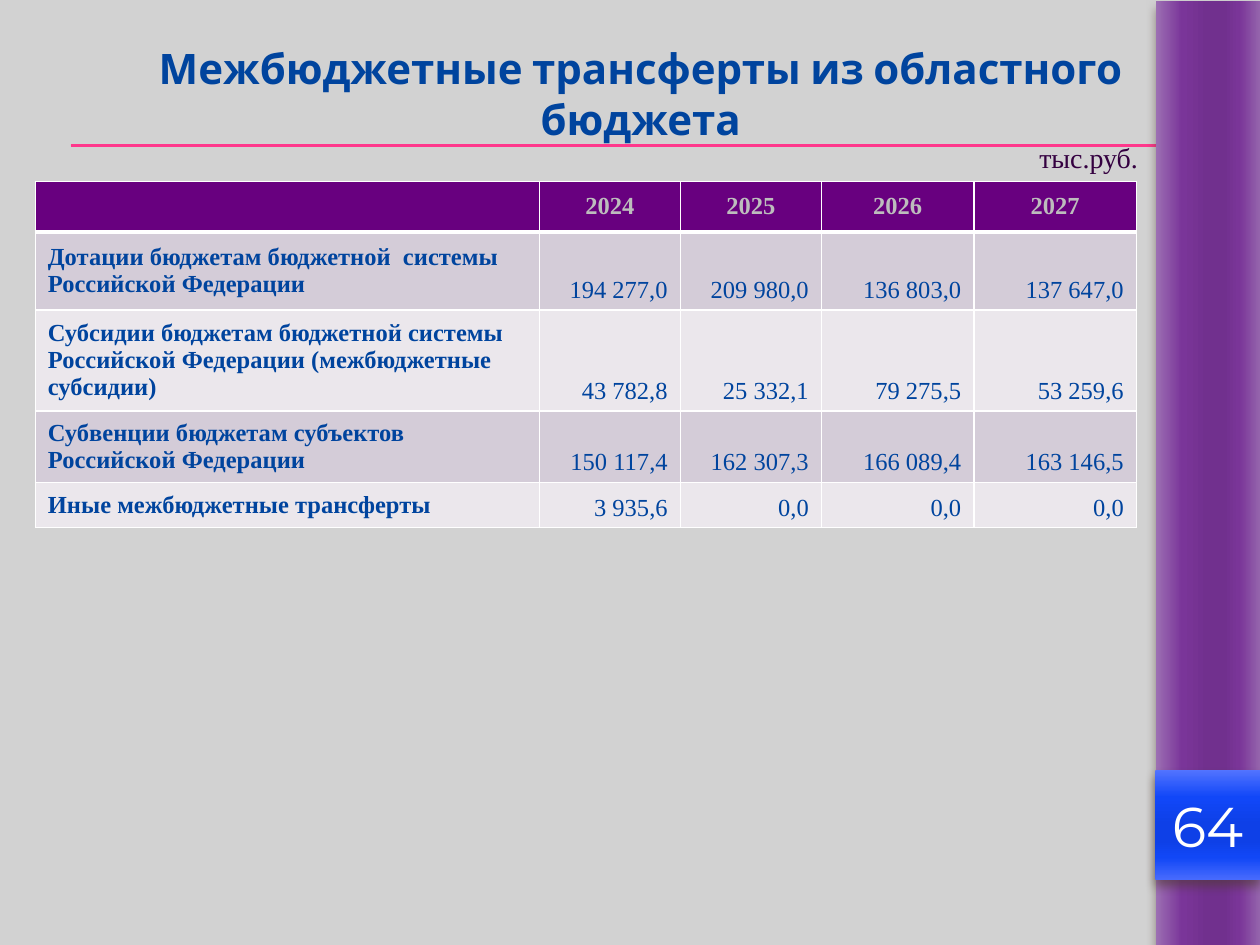
from dataclasses import dataclass, field

from lxml import etree
from pptx import Presentation
from pptx.dml.color import RGBColor
from pptx.enum.shapes import MSO_CONNECTOR, MSO_SHAPE
from pptx.enum.text import MSO_ANCHOR, MSO_AUTO_SIZE, PP_ALIGN
from pptx.oxml import parse_xml
from pptx.oxml.ns import nsdecls, qn
from pptx.util import Inches, Pt

LEFT, CENTER, RIGHT = PP_ALIGN.LEFT, PP_ALIGN.CENTER, PP_ALIGN.RIGHT
MIDDLE, BOTTOM = MSO_ANCHOR.MIDDLE, MSO_ANCHOR.BOTTOM
STRAIGHT = MSO_CONNECTOR.STRAIGHT
RECT = MSO_SHAPE.RECTANGLE
GROW = MSO_AUTO_SIZE.SHAPE_TO_FIT_TEXT

WIDTH, HEIGHT = Inches(10), Inches(7.5)
COL, ROW = WIDTH / 10, HEIGHT / 7.5
SERIF = "Times New Roman"
COLORS = {
    "background": "D2D2D2", "rule": "FF388C", "shadow": "4E3B30",
    "title": "00449E", "outline": "4E005F", "unit": "340040",
    "white": "FFFFFF", "header": "68007F", "header_text": "BDBDBD",
    "odd": "D4CCD8", "even": "EBE7EC",
}
GRADIENT_STOPS = (0, 25, 50, 65, 80, 100)
PURPLE = ("9C6FB3", "7A3599", "71308E", "71308E", "7A3598", "9566AD")
BLUE = ("5374FF", "1147F8", "0E40E7", "0E40E7", "1147F6", "476AFD")

COL_WIDTHS = (4, 1.12, 1.12, 1.21, 1.29)
ROW_HEIGHTS = (0.36, 0.62, 0.8, 0.56, 0.36)
TABLE_DATA = (
    ("", "2024", "2025", "2026", "2027"),
    ("Дотации бюджетам бюджетной  системы Российской Федерации",
     "194 277,0", "209 980,0", "136 803,0", "137 647,0"),
    ("Субсидии бюджетам бюджетной системы Российской Федерации (межбюджетные субсидии)",
     "43 782,8", "25 332,1", "79 275,5", "53 259,6"),
    ("Субвенции бюджетам субъектов Российской Федерации",
     "150 117,4", "162 307,3", "166 089,4", "163 146,5"),
    ("Иные межбюджетные трансферты", "3 935,6", "0,0", "0,0", "0,0"),
)


@dataclass
class Box:
    col: float
    row: float
    cols: float
    rows: float

    def emu(self):
        return (round(self.col * COL), round(self.row * ROW),
                round(self.cols * COL), round(self.rows * ROW))


@dataclass
class Style:
    color: str
    font: dict = field(default_factory=dict)
    align: PP_ALIGN = LEFT


@dataclass
class Panel:
    box: Box
    stops: tuple
    rotation: int = 0


@dataclass
class Label:
    text: str
    box: Box
    style: Style
    wrap: bool
    outline: str = ""


BAND = Panel(Box(5.84, 3.34, 7.5, 0.83), PURPLE, 270)
BADGE = Panel(Box(9.17, 6.11, 0.83, 0.87), BLUE)
NUMBER = Style("white", {"size": Pt(32), "name": "Montserrat"}, CENTER)
LABELS = (
    Label("Межбюджетные трансферты из областного бюджета",
          Box(0.91, 0.29, 8.35, 0.91),
          Style("title", {"size": Pt(24), "name": "Cabin", "bold": True}, CENTER),
          True, "outline"),
    Label("тыс.руб.", Box(8.15, 1.07, 1, 0.37),
          Style("unit", {"size": Pt(16), "name": SERIF}), False),
)
CELL_FONT = {"size": Pt(14), "name": SERIF}
HEAD = Style("header_text", {**CELL_FONT, "bold": True}, CENTER)
ROW_NAME = Style("title", {**CELL_FONT, "bold": True})
VALUE = Style("title", {**CELL_FONT, "bold": False}, RIGHT)


def rgb(name: str) -> RGBColor:
    return RGBColor.from_string(COLORS[name])


def line_xml(tag: str, color: str, points: float):
    return parse_xml(
        f'<a:{tag} {nsdecls("a")} w="{Pt(points)}"><a:solidFill>'
        f'<a:srgbClr val="{COLORS[color]}"/></a:solidFill></a:{tag}>')


def write(tf, text: str, style: Style):
    p = tf.paragraphs[0]
    p.alignment = style.align
    r = p.add_run()
    r.text = text
    for name, value in style.font.items():
        setattr(r.font, name, value)
    r.font.color.rgb = rgb(style.color)
    return r


def draw_rule(s, row: float):
    y = round(row * ROW)
    sp = s.shapes.add_connector(STRAIGHT, round(0.56 * COL), y, WIDTH, y)
    sp.line.color.rgb = rgb("rule")
    sp.line.width = Pt(0.75)
    etree.SubElement(sp._element.spPr, qn("a:effectLst"))


def draw_panel(s, panel: Panel):
    sp = s.shapes.add_shape(RECT, *panel.box.emu())
    sp.rotation = panel.rotation
    sp.line.fill.background()
    stops = "".join(
        f'<a:gs pos="{pos * 1000}"><a:srgbClr val="{color}"/></a:gs>'
        for pos, color in zip(GRADIENT_STOPS, panel.stops))
    sp._element.spPr.find(qn("a:prstGeom")).addnext(parse_xml(
        f'<a:gradFill {nsdecls("a")} rotWithShape="1"><a:gsLst>{stops}</a:gsLst>'
        '<a:lin ang="5400000" scaled="0"/></a:gradFill>'))
    sp._element.spPr.append(parse_xml(
        f'<a:effectLst {nsdecls("a")}><a:outerShdw blurRad="{Pt(6)}" dist="{Pt(4)}" '
        f'dir="5400000" rotWithShape="0"><a:srgbClr val="{COLORS["shadow"]}">'
        '<a:alpha val="60000"/></a:srgbClr></a:outerShdw></a:effectLst>'))
    return sp


def draw_label(s, label: Label):
    tf = s.shapes.add_textbox(*label.box.emu()).text_frame
    tf.word_wrap = label.wrap
    tf.auto_size = GROW
    r = write(tf, label.text, label.style)
    if label.outline:
        r.font._element.insert(0, line_xml("ln", label.outline, 0.75))


def draw_cell(cell, text: str, i: int, j: int):
    if i == 0:
        style, fill = HEAD, "header"
    else:
        style, fill = VALUE if j else ROW_NAME, "odd" if i % 2 else "even"
    cell.vertical_anchor = BOTTOM if style is VALUE else MIDDLE
    cell.fill.solid()
    cell.fill.fore_color.rgb = rgb(fill)
    if text:
        write(cell.text_frame, text, style)
    tc_pr = cell._tc.get_or_add_tcPr()
    for k, tag in enumerate(("lnL", "lnR", "lnT", "lnB")):
        heavy = (i, tag) in ((0, "lnB"), (1, "lnT"))
        tc_pr.insert(k, line_xml(tag, "white", 3 if heavy else 1))


def draw_table(s):
    box = Box(0.28, 1.44, sum(COL_WIDTHS), sum(ROW_HEIGHTS))
    table = s.shapes.add_table(len(ROW_HEIGHTS), len(COL_WIDTHS), *box.emu()).table
    for column, width in zip(table.columns, COL_WIDTHS):
        column.width = round(width * COL)
    for i, height in enumerate(ROW_HEIGHTS):
        table.rows[i].height = round(height * ROW)
        for j, text in enumerate(TABLE_DATA[i]):
            draw_cell(table.cell(i, j), text, i, j)


def main():
    prs = Presentation()
    prs.slide_width, prs.slide_height = WIDTH, HEIGHT
    s = prs.slides.add_slide(prs.slide_layouts[6])
    s.background.fill.solid()
    s.background.fill.fore_color.rgb = rgb("background")
    for row in (1.15, 1.16):
        draw_rule(s, row)
    draw_panel(s, BAND)
    tf = draw_panel(s, BADGE).text_frame
    tf.vertical_anchor = MIDDLE
    write(tf, "64", NUMBER)
    title, unit = LABELS
    draw_label(s, title)
    draw_table(s)
    draw_label(s, unit)
    prs.save("out.pptx")


if __name__ == "__main__":
    main()
